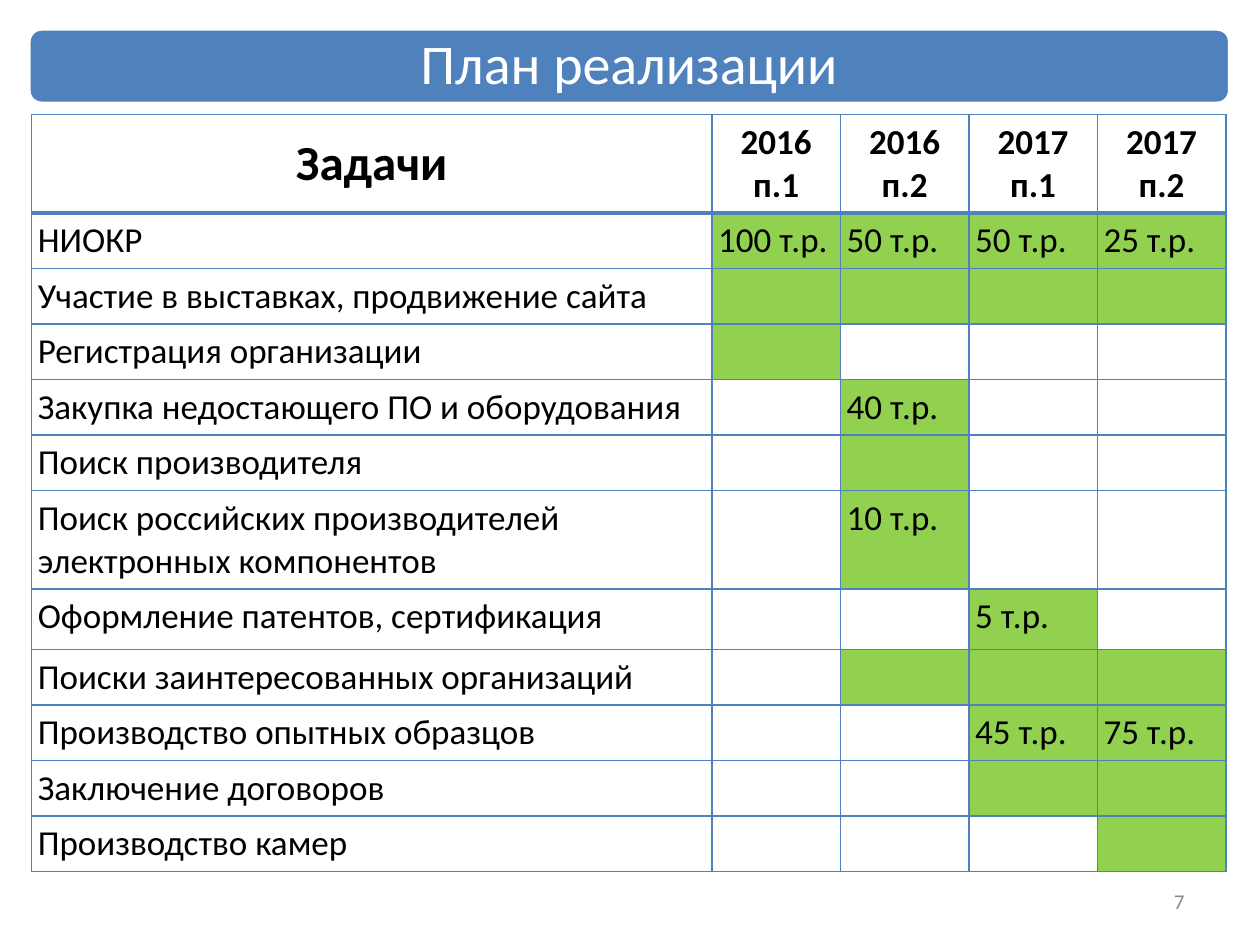
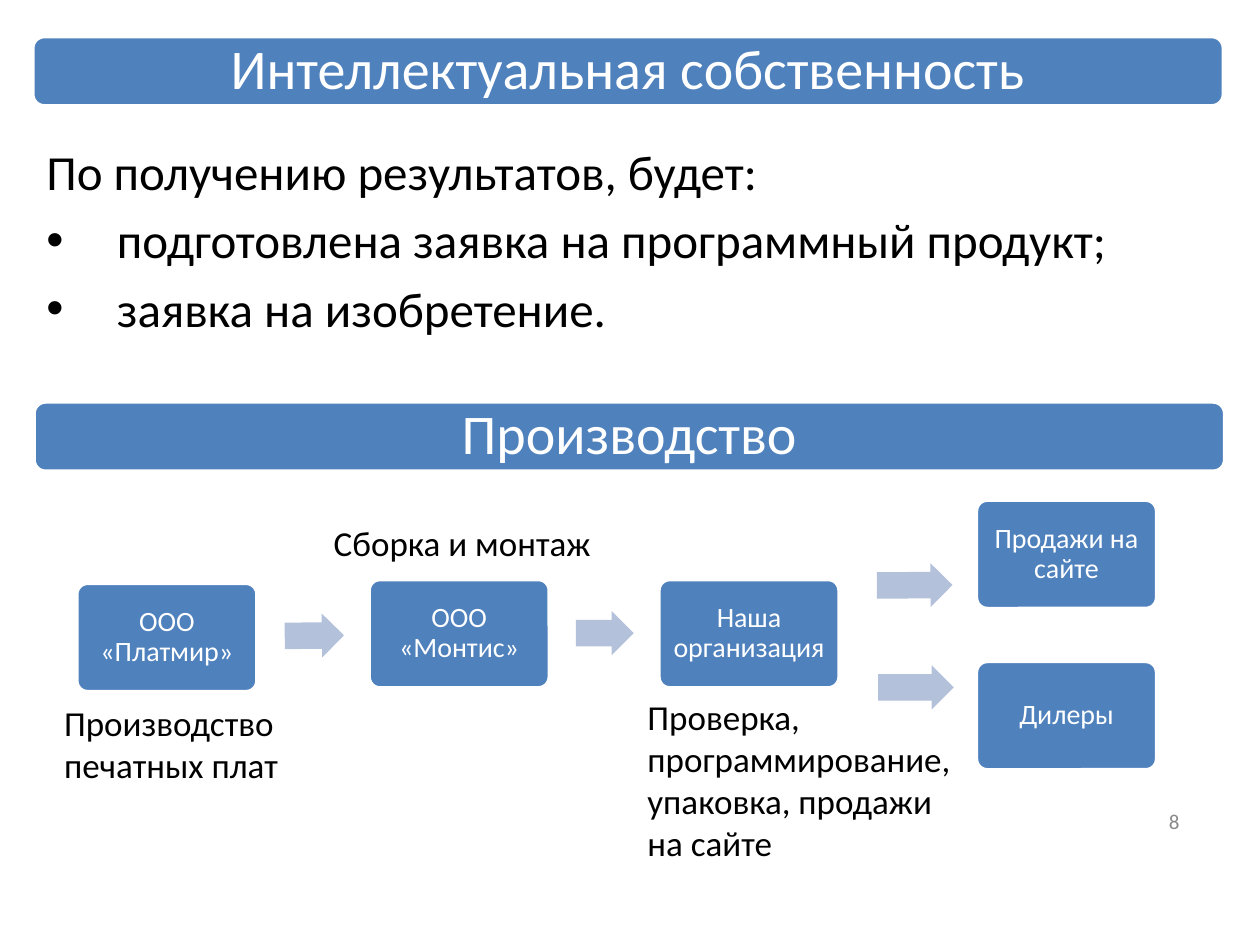
from dataclasses import dataclass

from lxml import etree
from pptx import Presentation
from pptx.dml.color import RGBColor
from pptx.enum.shapes import MSO_SHAPE
from pptx.enum.text import MSO_ANCHOR, PP_ALIGN
from pptx.oxml.ns import qn
from pptx.util import Emu, Inches, Pt

ROUND_RECT, RIGHT_ARROW = MSO_SHAPE.ROUNDED_RECTANGLE, MSO_SHAPE.RIGHT_ARROW
TOP, MIDDLE = MSO_ANCHOR.TOP, MSO_ANCHOR.MIDDLE
LEFT, CENTER, RIGHT = PP_ALIGN.LEFT, PP_ALIGN.CENTER, PP_ALIGN.RIGHT
COLUMNS = 100  # square grid: 100 columns by 75 rows


@dataclass(frozen=True)
class Theme:
    font: str = "Calibri"
    blue: str = "4F81BD"
    pale_blue: str = "B3C1DB"
    green: str = "92D050"
    white: str = "FFFFFF"
    black: str = "000000"
    grey: str = "898989"
    banner: int = 32
    lead: int = 28
    body: int = 20
    node: int = 16
    number: int = 12


THEME = Theme()


def rgb(value):
    return RGBColor.from_string(value)


def write(tf, text, size=THEME.body, color=THEME.black, bold=False, align=LEFT,
          anchor=TOP, line_spacing=None, hanging=0, bullets_from=None):
    """Fill a text frame, one paragraph a line; lines from bullets_from on get bullets."""
    tf.word_wrap = True
    tf.vertical_anchor = anchor
    for i, line in enumerate(text.split("\n")):
        p = tf.add_paragraph() if i else tf.paragraphs[0]
        if hanging:
            pPr = p._p.get_or_add_pPr()
            pPr.set("marL", str(hanging))
            pPr.set("indent", str(-hanging))
            if bullets_from is not None and i >= bullets_from:
                etree.SubElement(pPr, qn("a:buFont")).set("typeface", "Arial")
                etree.SubElement(pPr, qn("a:buChar")).set("char", "•")
        p.alignment = align
        if line_spacing:
            p.line_spacing = line_spacing
        if i:
            p.space_before = Pt(size * 0.2)
        r = p.add_run()
        r.text = line
        r.font.name, r.font.size, r.font.bold = THEME.font, Pt(size), bold
        r.font.color.rgb = rgb(color)


def set_borders(cell, color, **widths):
    """Draw cell borders; widths maps the sides L, R, T, B to points."""
    tcPr = cell._tc.get_or_add_tcPr()
    for side, width in widths.items():
        ln = etree.SubElement(tcPr, qn(f"a:ln{side}"), w=str(Pt(width)))
        fill = etree.SubElement(ln, qn("a:solidFill"))
        etree.SubElement(fill, qn("a:srgbClr"), val=color)


class Deck:
    """Holds the theme and the current slide; places are in grid units."""

    def __init__(self, prs, theme):
        self.prs, self.theme, self.s = prs, theme, None
        self.unit = prs.slide_width / COLUMNS

    def new_slide(self):
        self.s = self.prs.slides.add_slide(self.prs.slide_layouts[6])

    def grid(self, *values):
        return [Emu(round(v * self.unit)) for v in values]

    def shape(self, kind, place, fill, line=None):
        sp = self.s.shapes.add_shape(kind, *self.grid(*place))
        sp.shadow.inherit = False
        sp.fill.solid()
        sp.fill.fore_color.rgb = rgb(fill)
        if line:
            sp.line.color.rgb = rgb(line)
            sp.line.width = Pt(2)
        else:
            sp.line.fill.background()
        return sp

    def panel(self, text, place, size, radius):
        """Blue rounded rectangle with centred white text."""
        t = self.theme
        sp = self.shape(ROUND_RECT, place, t.blue, t.white)
        sp.adjustments[0] = radius
        tf = sp.text_frame
        tf.margin_left = tf.margin_right = Inches(0.07)
        tf.margin_top = tf.margin_bottom = 0
        write(tf, text, size=size, color=t.white, align=CENTER, anchor=MIDDLE,
              line_spacing=0.9)

    def banner(self, text, place):
        self.panel(text, place, self.theme.banner, 0.167)

    def node(self, text, left, top):
        self.panel(text, (left, top, 14.3, 8.6), self.theme.node, 0.1)

    def arrow(self, left, top, width, rotation=0):
        sp = self.shape(RIGHT_ARROW, (left, top, width, 3.5), self.theme.pale_blue)
        sp.adjustments[0], sp.adjustments[1] = 0.6, 0.5
        sp.rotation = rotation

    def text(self, text, place, **style):
        sp = self.s.shapes.add_textbox(*self.grid(*place))
        write(sp.text_frame, text, **style)

    def page_number(self, number, left, top):
        self.text(str(number), (left, top, 23.3, 4), size=self.theme.number,
                  color=self.theme.grey, align=RIGHT, anchor=MIDDLE)

    def schedule(self, left, top, widths, heights, head, tasks):
        """Task table; a period is None when idle, else green with its cost."""
        t = self.theme
        rows = [head] + [(task, *periods) for task, periods in tasks]
        frame = self.s.shapes.add_table(
            len(rows), len(head), *self.grid(left, top, sum(widths), sum(heights)))
        table = frame.table
        table.first_row = table.horz_banding = False
        for column, width in zip(table.columns, self.grid(*widths)):
            column.width = width
        for row, height in zip(table.rows, self.grid(*heights)):
            row.height = height
        for i, values in enumerate(rows):
            for j, value in enumerate(values):
                cell = table.cell(i, j)
                cell.margin_left = cell.margin_right = Inches(0.05)
                cell.margin_top = cell.margin_bottom = Inches(0.05)
                set_borders(cell, t.blue, L=1, R=1, T=2 if i == 1 else 1,
                            B=2 if i == 0 else 1)
                if i and j and value is not None:
                    cell.fill.solid()
                    cell.fill.fore_color.rgb = rgb(t.green)
                else:
                    cell.fill.background()
                if value:
                    write(cell.text_frame, value, bold=i == 0,
                          size=t.lead if i == j == 0 else t.body,
                          align=CENTER if i == 0 else LEFT)
                cell.vertical_anchor = MIDDLE if i == 0 else TOP


HEAD = ("Задачи", "2016 п.1", "2016 п.2", "2017 п.1", "2017 п.2")
NO = None
TASKS = [
    ("НИОКР", ("100 т.р.", "50 т.р.", "50 т.р.", "25 т.р.")),
    ("Участие в выставках, продвижение сайта", ("", "", "", "")),
    ("Регистрация организации", ("", NO, NO, NO)),
    ("Закупка недостающего ПО и оборудования", (NO, "40 т.р.", NO, NO)),
    ("Поиск производителя", (NO, "", NO, NO)),
    ("Поиск российских производителей электронных компонентов",
     (NO, "10 т.р.", NO, NO)),
    ("Оформление патентов, сертификация", (NO, NO, "5 т.р.", NO)),
    ("Поиски заинтересованных организаций", (NO, "", "", "")),
    ("Производство опытных образцов", (NO, NO, "45 т.р.", "75 т.р.")),
    ("Заключение договоров", (NO, NO, "", "")),
    ("Производство камер", (NO, NO, NO, "")),
]
NODES = [
    ("ООО «Платмир»", 6.1, 46.3),
    ("ООО «Монтис»", 29.3, 46),
    ("Наша организация", 52.3, 46),
    ("Продажи на сайте", 77.5, 39.7),
    ("Дилеры", 77.5, 52.5),
]
ARROWS = [
    (22.6, 48.7, 4.7, 359.3),
    (45.7, 48.5, 4.6),
    (69.6, 44.7, 6, 359.6),
    (69.7, 52.8, 6),
]
CAPTIONS = [
    ("Производство печатных плат", (4.1, 55.2, 21.1, 8.9)),
    ("Сборка и монтаж", (25.5, 40.9, 22.8, 5.5)),
    ("Проверка, программирование, упаковка, продажи на сайте",
     (50.4, 54.7, 27, 14.2)),
]
RESULTS = ("По получению результатов, будет:\n"
           "подготовлена заявка на программный продукт;\n"
           "заявка на изобретение.")


def plan_slide(deck):
    deck.new_slide()
    deck.banner("План реализации", (2.3, 2.3, 95.3, 5.9))
    heights = [7.8] + [4.4] * 5 + [7.8, 4.8] + [4.4] * 4
    deck.schedule(2.5, 9.1, [54] + [10.2] * 4, heights, HEAD, TASKS)
    deck.page_number(7, 71.7, 69.5)


def production_slide(deck):
    deck.new_slide()
    deck.banner("Интеллектуальная собственность", (2.6, 2.9, 94.5, 5.5))
    deck.text(RESULTS, (2.7, 10.7, 94.5, 18.1), size=THEME.lead,
              hanging=Inches(0.56), bullets_from=1)
    deck.banner("Производство", (2.7, 31.9, 94.5, 5.5))
    for node in NODES:
        deck.node(*node)
    for arrow in ARROWS:
        deck.arrow(*arrow)
    for caption, place in CAPTIONS:
        deck.text(caption, place)
    deck.page_number(8, 71.3, 63.2)


def main():
    prs = Presentation()
    prs.slide_width, prs.slide_height = Inches(10), Inches(7.5)
    deck = Deck(prs, THEME)
    plan_slide(deck)
    production_slide(deck)
    prs.save("out.pptx")


if __name__ == "__main__":
    main()
